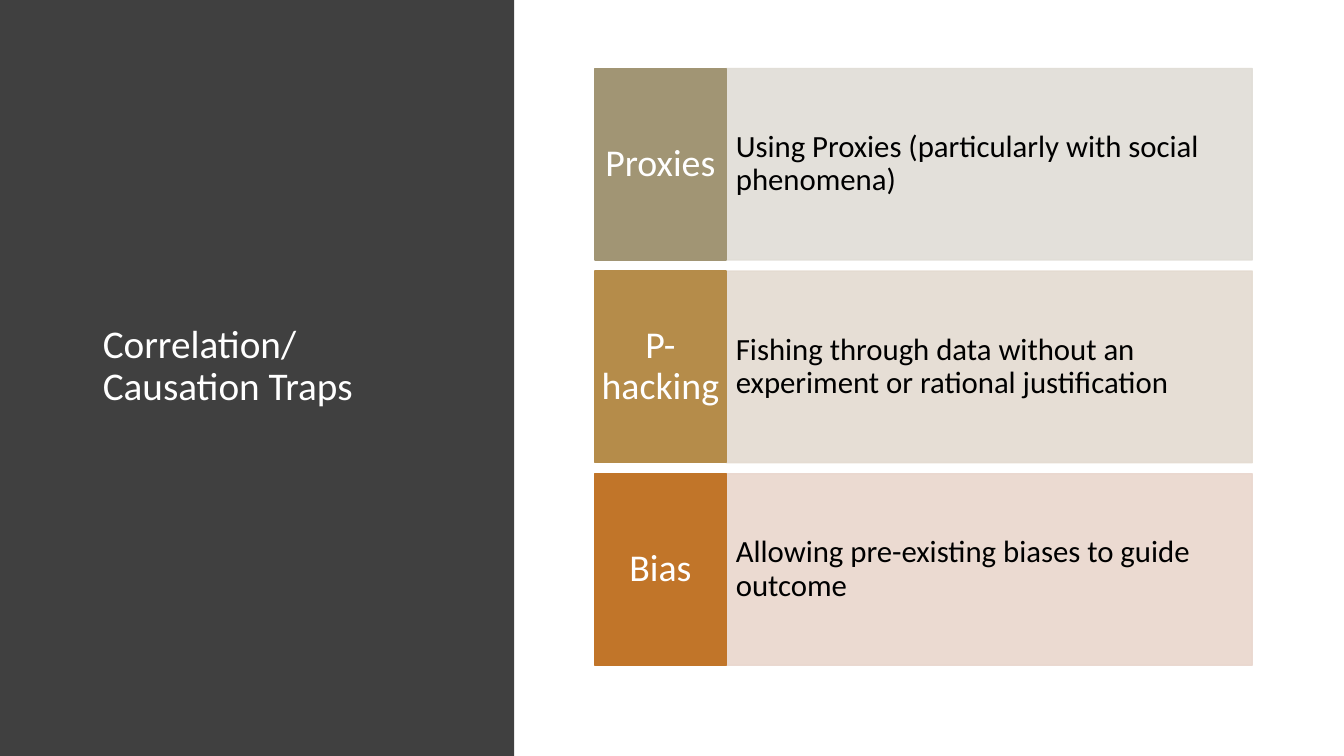
from lxml.etree import SubElement
from pptx import Presentation
from pptx.dml.color import RGBColor
from pptx.enum.shapes import MSO_SHAPE
from pptx.enum.text import MSO_ANCHOR, MSO_AUTO_SIZE, PP_ALIGN
from pptx.oxml.ns import qn
from pptx.util import Inches, Pt

WHITE = RGBColor(0xFF, 0xFF, 0xFF)
BLACK = RGBColor(0x00, 0x00, 0x00)
CHARCOAL = RGBColor(0x40, 0x40, 0x40)

TRAPS = [
    ("Proxies", "Using Proxies (particularly with social phenomena)",
     RGBColor(0xA1, 0x95, 0x74), RGBColor(0xE0, 0xDD, 0xD6)),
    ("P-hacking", "Fishing through data without an experiment or rational justification",
     RGBColor(0xB5, 0x8C, 0x4A), RGBColor(0xE4, 0xDB, 0xD1)),
    ("Bias", "Allowing pre-existing biases to guide outcome",
     RGBColor(0xC1, 0x75, 0x29), RGBColor(0xE9, 0xD6, 0xCD)),
]
ROW_TOP, ROW_STEP, ROW_HEIGHT = 0.68, 2.01, 1.9
LABEL_LEFT, LABEL_WIDTH, DETAIL_WIDTH = 5.9, 1.3, 5.22


def set_format(target, values):
    """Set each named attribute on the target."""
    for name, value in values.items():
        setattr(target, name, value)


def write_text(shape, text, size, color, align, inset_x, inset_y):
    """Fill a shape with one vertically centred paragraph."""
    frame = shape.text_frame
    set_format(frame, {
        "text": text, "word_wrap": True, "auto_size": MSO_AUTO_SIZE.NONE,
        "vertical_anchor": MSO_ANCHOR.MIDDLE,
        "margin_left": Inches(inset_x), "margin_right": Inches(inset_x),
        "margin_top": Inches(inset_y), "margin_bottom": Inches(inset_y),
    })
    para = frame.paragraphs[0]
    set_format(para, {"alignment": align, "line_spacing": 0.9})
    span = para.runs[0]
    set_format(span.font, {"name": "Calibri", "size": Pt(size)})
    span.font.color.rgb = color


def add_block(page, left, top, width, height, color):
    """Add a plain filled rectangle without an outline."""
    block = page.shapes.add_shape(
        MSO_SHAPE.RECTANGLE, Inches(left), Inches(top), Inches(width), Inches(height))
    block.shadow.inherit = False
    block.fill.solid()
    block.fill.fore_color.rgb = color
    block.line.fill.background()
    return block


def outline(block, color):
    """Give a block a thin outline."""
    block.line.color.rgb = color
    block.line.width = Pt(1)


def soften(block, percent):
    """Set the opacity of a block's fill and outline."""
    for color in block.element.spPr.iter(qn("a:srgbClr")):
        SubElement(color, qn("a:alpha"), val=str(percent * 1000))


def add_title(page, text):
    """Place the title on a dark side panel."""
    title = page.shapes.title
    panel = add_block(page, 0, 0, 5.1, 7.5, CHARCOAL)
    title.element.addprevious(panel.element)
    set_format(title, {"left": Inches(0.92), "top": Inches(0.68),
                       "width": Inches(3.67), "height": Inches(5.92)})
    write_text(title, text, 28, WHITE, PP_ALIGN.LEFT, 0.1, 0.05)


def add_trap(page, top, label, detail, strong, pale):
    """Add one row with a coloured label and its pale explanation."""
    explanation = add_block(
        page, LABEL_LEFT + LABEL_WIDTH, top, DETAIL_WIDTH, ROW_HEIGHT, pale)
    outline(explanation, pale)
    soften(explanation, 90)
    write_text(explanation, detail, 22, BLACK, PP_ALIGN.LEFT, 0.1, 0.48)
    tag = add_block(page, LABEL_LEFT, top, LABEL_WIDTH, ROW_HEIGHT, strong)
    outline(tag, strong)
    write_text(tag, label, 27, WHITE, PP_ALIGN.CENTER, 0.03, 0.19)


def main():
    """Build and save the deck."""
    deck = Presentation()
    set_format(deck, {"slide_width": Inches(13.33), "slide_height": Inches(7.5)})
    page = deck.slides.add_slide(deck.slide_layouts[5])
    add_title(page, "Correlation/Causation Traps")
    for row, trap in enumerate(TRAPS):
        add_trap(page, ROW_TOP + row * ROW_STEP, *trap)
    deck.save("out.pptx")


if __name__ == "__main__":
    main()
